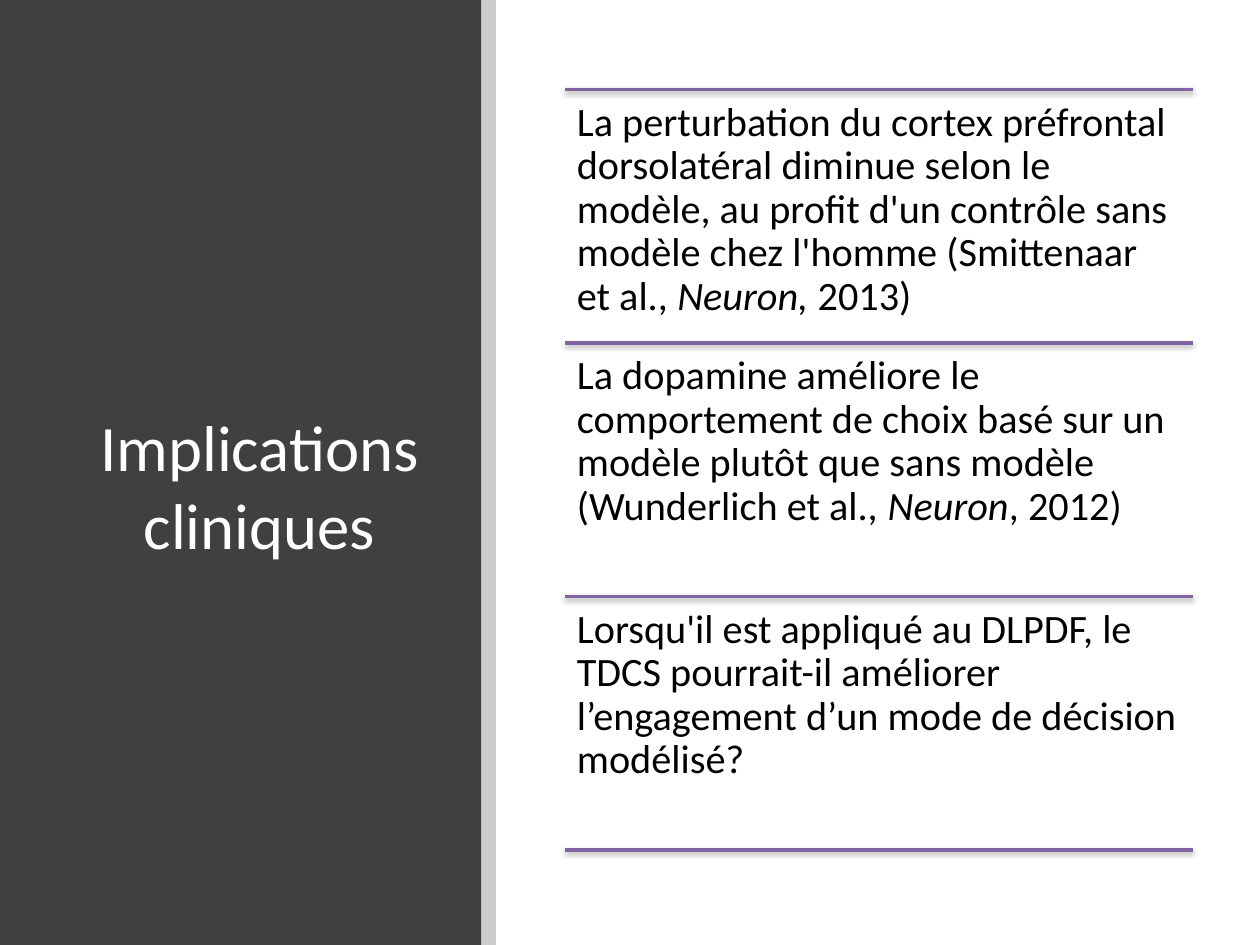
from dataclasses import dataclass

from lxml import etree
from pptx import Presentation
from pptx.dml.color import RGBColor
from pptx.enum.shapes import MSO_CONNECTOR, MSO_SHAPE
from pptx.enum.text import MSO_ANCHOR, MSO_AUTO_SIZE, PP_ALIGN
from pptx.oxml import parse_xml
from pptx.oxml.ns import nsdecls, qn
from pptx.shapes.autoshape import Shape
from pptx.shapes.group import GroupShape
from pptx.slide import Slide
from pptx.util import Cm, Pt

RECTANGLE = MSO_SHAPE.RECTANGLE
STRAIGHT = MSO_CONNECTOR.STRAIGHT
TOP = MSO_ANCHOR.TOP
MIDDLE = MSO_ANCHOR.MIDDLE
CENTER = PP_ALIGN.CENTER
LEFT = PP_ALIGN.LEFT
NO_AUTO_SIZE = MSO_AUTO_SIZE.NONE

FONT = "Calibri"
PANEL_WIDTH = 9.7
BAR_WIDTH = 0.3
SLIDE_HEIGHT = 19.05
LIST_LEFT = 11.38
LIST_TOP = 1.8
LIST_WIDTH = 12.67
ROW_HEIGHT = 5.11


@dataclass
class Segment:
    text: str
    italic: bool = False


@dataclass
class Implication:
    segments: list[Segment]


IMPLICATIONS = [
    Implication([
        Segment("La perturbation du cortex préfrontal dorsolatéral diminue selon le modèle, "
                "au profit d'un contrôle sans modèle chez l'homme (Smittenaar et al., "),
        Segment("Neuron, ", True),
        Segment("2013)"),
    ]),
    Implication([
        Segment("La dopamine améliore le comportement de choix basé sur un modèle "
                "plutôt que sans modèle (Wunderlich et al., "),
        Segment("Neuron", True),
        Segment(", 2012)"),
    ]),
    Implication([
        Segment("Lorsqu'il est appliqué au DLPDF, le TDCS pourrait-il améliorer "
                "l’engagement d’un mode de décision modélisé?"),
    ]),
]


def color(value: str) -> RGBColor:
    return RGBColor.from_string(value)


def add_band(slide: Slide, left: float, width: float, fill: str) -> Shape:
    shape = slide.shapes.add_shape(RECTANGLE, Cm(left), 0, Cm(width), Cm(SLIDE_HEIGHT))
    shape.shadow.inherit = False
    shape.fill.solid()
    shape.fill.fore_color.rgb = color(fill)
    shape.line.fill.background()
    return shape


def add_background(slide: Slide) -> None:
    panel = add_band(slide, 0, PANEL_WIDTH, "404040")
    slide.shapes.title.element.addprevious(panel.element)
    bar = add_band(slide, PANEL_WIDTH, BAR_WIDTH, "000000")
    fill_color = bar.element.spPr.find(qn("a:solidFill")).find(qn("a:srgbClr"))
    etree.SubElement(fill_color, qn("a:alpha"), val="20000")


def fill_title(title: Shape) -> None:
    title.left, title.top, title.width, title.height = Cm(1.75), Cm(2.26), Cm(6.96), Cm(15.01)
    frame = title.text_frame
    frame.word_wrap = True
    frame.auto_size = NO_AUTO_SIZE
    frame.vertical_anchor = MIDDLE
    paragraph = frame.paragraphs[0]
    paragraph.alignment = CENTER
    run = paragraph.add_run()
    run.text = "Implications cliniques"
    run.font.name = FONT
    run.font.size = Pt(37)
    run.font.color.rgb = color("FFFFFF")


def add_rule(group: GroupShape, top: float) -> None:
    rule = group.shapes.add_connector(
        STRAIGHT, Cm(LIST_LEFT), Cm(top), Cm(LIST_LEFT + LIST_WIDTH), Cm(top))
    rule.line.color.rgb = color("8064A2")
    rule.line.width = Pt(2)
    rule.element.spPr.append(parse_xml(
        f'<a:effectLst {nsdecls("a")}>'
        f'<a:outerShdw blurRad="{Pt(3.1)}" dist="{Pt(1.6)}" dir="5400000" rotWithShape="0">'
        '<a:srgbClr val="000000"><a:alpha val="38000"/></a:srgbClr>'
        '</a:outerShdw></a:effectLst>'))


def add_implication(group: GroupShape, implication: Implication, top: float) -> None:
    box = group.shapes.add_textbox(Cm(LIST_LEFT), Cm(top), Cm(LIST_WIDTH), Cm(ROW_HEIGHT))
    frame = box.text_frame
    frame.word_wrap = True
    frame.vertical_anchor = TOP
    frame.margin_left = frame.margin_right = frame.margin_top = frame.margin_bottom = Cm(0.25)
    paragraph = frame.paragraphs[0]
    paragraph.alignment = LEFT
    paragraph.line_spacing = 0.9
    for segment in implication.segments:
        run = paragraph.add_run()
        run.text = segment.text
        run.font.name = FONT
        run.font.size = Pt(23)
        run.font.italic = segment.italic
        run.font.color.rgb = color("000000")


def main() -> None:
    presentation = Presentation()
    presentation.slide_width = Cm(25.4)
    presentation.slide_height = Cm(SLIDE_HEIGHT)
    slide = presentation.slides.add_slide(presentation.slide_layouts.get_by_name("Title Only"))
    add_background(slide)
    fill_title(slide.shapes.title)
    group = slide.shapes.add_group_shape()
    for index, implication in enumerate(IMPLICATIONS):
        top = LIST_TOP + index * ROW_HEIGHT
        add_rule(group, top)
        add_implication(group, implication, top)
    add_rule(group, LIST_TOP + len(IMPLICATIONS) * ROW_HEIGHT)
    presentation.save("out.pptx")


if __name__ == "__main__":
    main()
